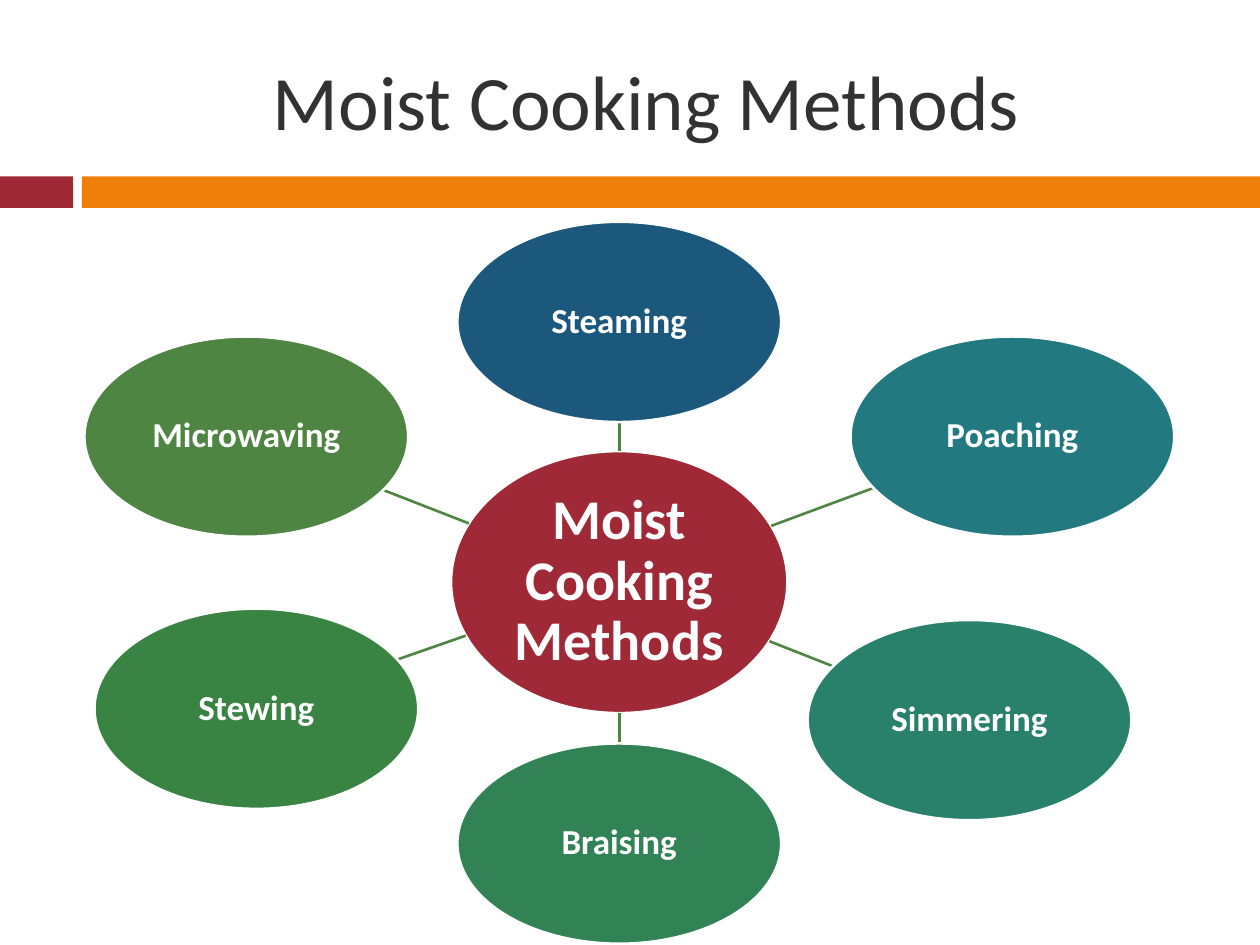
import dataclasses
import math

import pptx
import pptx.dml.color
import pptx.enum.shapes
import pptx.enum.text
import pptx.oxml.ns
import pptx.util
from lxml import etree
from pptx.util import Inches


@dataclasses.dataclass(frozen=True)
class Theme:
    font: str = "Calibri"
    title_size: int = 44
    hub_size: int = 32
    spoke_size: int = 20
    line_width: float = 1.5
    white: str = "FFFFFF"
    dark: str = "323232"
    red: str = "9F2936"
    orange: str = "F07F09"
    link: str = "4E8542"


@dataclasses.dataclass(frozen=True)
class Box:
    left: float
    top: float
    width: float
    height: float

    @property
    def center(self):
        return self.left + self.width / 2, self.top + self.height / 2

    def inches(self):
        return [Inches(n) for n in dataclasses.astuple(self)]

    def edge_towards(self, other):
        x, y = self.center
        dx, dy = other.center[0] - x, other.center[1] - y
        reach = 1 / math.hypot(dx / (self.width / 2), dy / (self.height / 2))
        return Inches(x + dx * reach), Inches(y + dy * reach)


THEME = Theme()
SHAPES = pptx.enum.shapes.MSO_SHAPE
SPOKE_SIZE = (2.57, 1.59)
SPOKES = [
    ("Steaming", 2.96, 0.06, "1B587C"),
    ("Poaching", 6.08, 0.97, "22797F"),
    ("Simmering", 5.74, 3.22, "29816B"),
    ("Braising", 2.96, 4.2, "318355"),
    ("Stewing", 0.08, 3.13, "398443"),
    ("Microwaving", 0, 0.97, "4E8542"),
]


def color(value):
    return pptx.dml.color.RGBColor.from_string(value)


def write_text(shape, text, size, ink=THEME.white, bold=False, spacing=None, inset=None):
    frame = shape.text_frame
    frame.word_wrap = True
    frame.auto_size = pptx.enum.text.MSO_AUTO_SIZE.NONE
    frame.vertical_anchor = pptx.enum.text.MSO_ANCHOR.MIDDLE
    if inset is not None:
        frame.margin_left = frame.margin_right = Inches(inset)
        frame.margin_top = frame.margin_bottom = Inches(inset)
    para = frame.paragraphs[0]
    para.alignment = pptx.enum.text.PP_ALIGN.CENTER
    para.line_spacing = spacing
    span = para.add_run()
    span.text = text
    span.font.name = THEME.font
    span.font.size = pptx.util.Pt(size)
    span.font.bold = bold
    span.font.color.rgb = color(ink)


def add_filled(page, kind, box, fill):
    shape = page.shapes.add_shape(kind, *box.inches())
    shape.shadow.inherit = False
    shape.fill.solid()
    shape.fill.fore_color.rgb = color(fill)
    shape.line.fill.background()
    return shape


def add_bubble(page, box, text, fill, size, inset):
    bubble = add_filled(page, SHAPES.OVAL, box, fill)
    bubble.line.color.rgb = color(THEME.white)
    bubble.line.width = pptx.util.Pt(THEME.line_width)
    write_text(bubble, text, size, bold=True, spacing=0.9, inset=inset)


def add_link(page, start, end):
    link = page.shapes.add_connector(
        pptx.enum.shapes.MSO_CONNECTOR.STRAIGHT,
        *start.edge_towards(end), *end.edge_towards(start))
    link.line.color.rgb = color(THEME.link)
    link.line.width = pptx.util.Pt(THEME.line_width)
    etree.SubElement(link._element.spPr, pptx.oxml.ns.qn("a:effectLst"))


def place_title(page, box):
    title = page.shapes.title
    title.left, title.top, title.width, title.height = box.inches()
    write_text(title, "Moist Cooking Methods", THEME.title_size, ink=THEME.dark)


def place_band(page, box):
    accent, gap = 0.58, 0.07
    offset = accent + gap
    add_filled(page, SHAPES.RECTANGLE,
               Box(box.left, box.top, accent, box.height), THEME.red)
    add_filled(page, SHAPES.RECTANGLE,
               Box(box.left + offset, box.top, box.width - offset, box.height),
               THEME.orange)


def place_radial(page, box):
    hub = Box(box.left + 2.91, box.top + 1.88, 2.67, 2.08)
    add_bubble(page, hub, "Moist Cooking Methods", THEME.red, THEME.hub_size, 0.02)
    for text, x, y, fill in SPOKES:
        spoke = Box(box.left + x, box.top + y, *SPOKE_SIZE)
        add_link(page, hub, spoke)
        add_bubble(page, spoke, text, fill, THEME.spoke_size, 0.01)


def main():
    deck = pptx.Presentation()
    deck.slide_width, deck.slide_height = Inches(10), Inches(7.5)
    page = deck.slides.add_slide(deck.slide_layouts[5])
    place_band(page, Box(0, 1.4, 10, 0.25))
    place_title(page, Box(0.67, 0.25, 8.92, 1.08))
    place_radial(page, Box(0.67, 1.7, 8.65, 5.8))
    deck.save("out.pptx")


if __name__ == "__main__":
    main()
